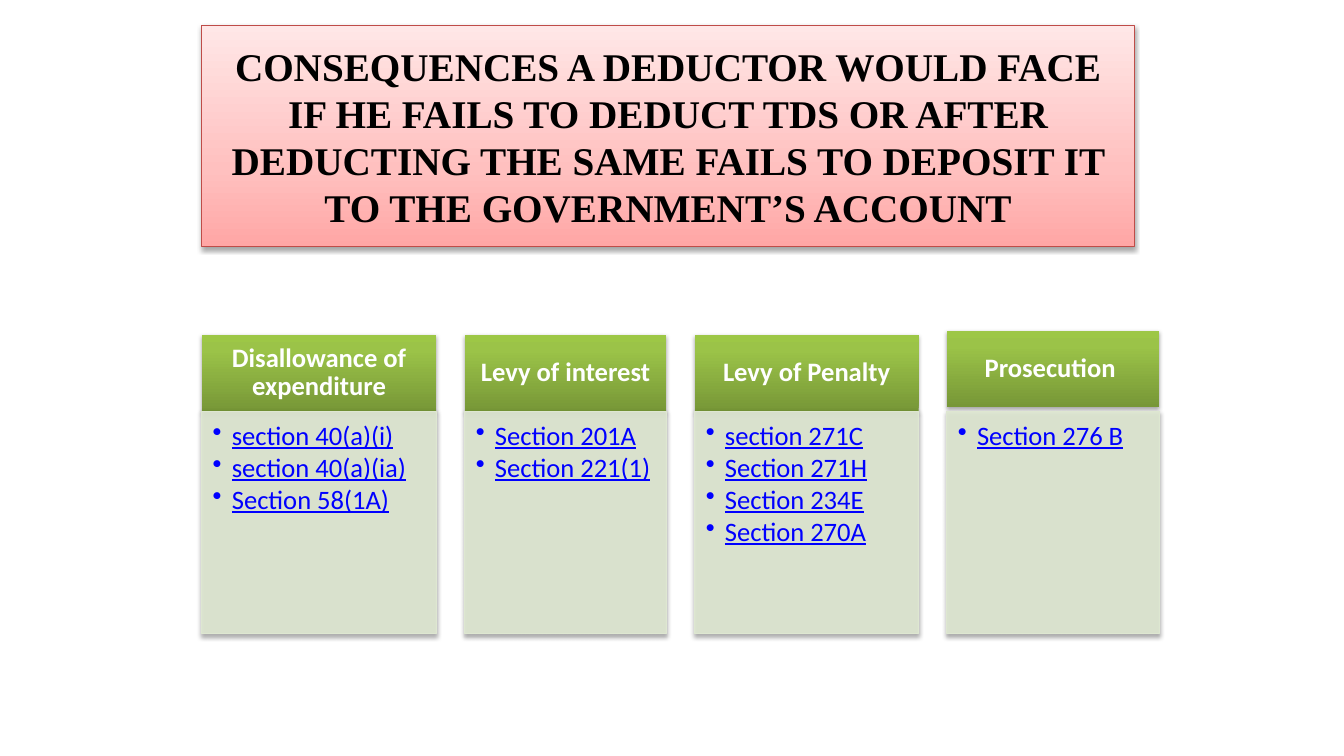
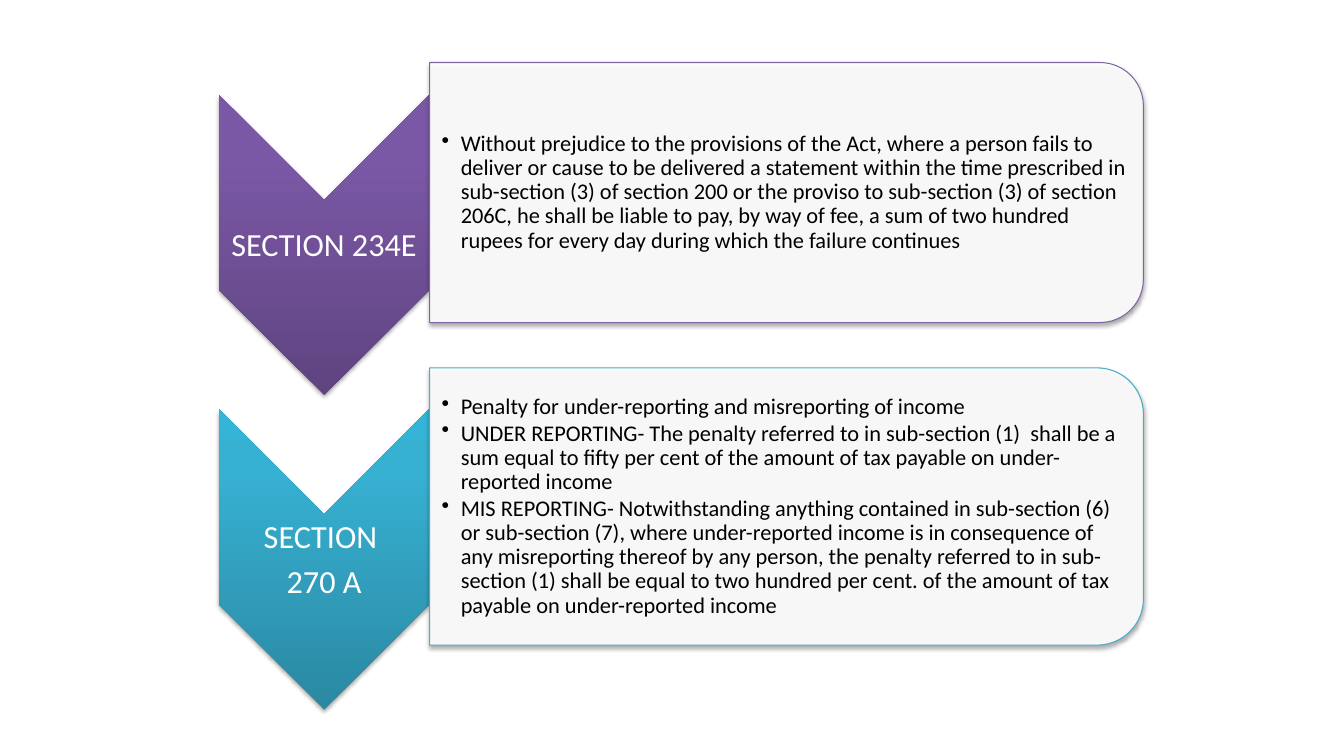
from pptx import Presentation
from pptx.dml.color import RGBColor
from pptx.enum.shapes import MSO_SHAPE
from pptx.enum.text import MSO_ANCHOR, MSO_AUTO_SIZE, PP_ALIGN
from pptx.oxml import parse_xml
from pptx.oxml.ns import nsdecls, qn
from pptx.util import Inches, Pt

# Shared colours
BLACK = RGBColor(0x00, 0x00, 0x00)
WHITE = RGBColor(0xFF, 0xFF, 0xFF)
LINK_BLUE = RGBColor(0x00, 0x00, 0xFF)
TITLE_LINE = RGBColor(0xBF, 0x4C, 0x48)
PANEL_GREEN = RGBColor(0xDE, 0xE7, 0xD1)
PURPLE = RGBColor(0x80, 0x64, 0xA2)
TEAL = RGBColor(0x4B, 0xAC, 0xC6)

# Gradients run from the bottom upwards: (percent, colour)
PINK_GRADIENT = [(0, RGBColor(0xFF, 0xA6, 0xA5)), (35, RGBColor(0xFF, 0xC0, 0xBF)),
                 (100, RGBColor(0xFF, 0xE7, 0xE7))]
GREEN_GRADIENT = [(0, RGBColor(0x77, 0x97, 0x37)), (80, RGBColor(0x9B, 0xC3, 0x48)),
                  (100, RGBColor(0x9D, 0xC7, 0x46))]
PURPLE_GRADIENT = [(0, RGBColor(0x5F, 0x44, 0x80)), (80, RGBColor(0x7B, 0x58, 0xA6)),
                   (100, RGBColor(0x7C, 0x57, 0xA8))]
TEAL_GRADIENT = [(0, RGBColor(0x2A, 0x88, 0xA2)), (80, RGBColor(0x37, 0xB1, 0xD2)),
                 (100, RGBColor(0x34, 0xB4, 0xD6))]


def style_shape(shape, gradient=None, color=None, line=None):
    """Give a shape a gradient or a 90% solid fill, an outline and a soft shadow."""
    properties = shape._element.spPr
    if gradient:
        shape.fill.gradient()
        shape.fill.gradient_angle = 90
        gradient_fill = properties.find(qn("a:gradFill"))
        gradient_fill.set("rotWithShape", "0")
        stops = gradient_fill.find(qn("a:gsLst"))
        stops.clear()
        for percent, stop_color in gradient:
            stops.append(parse_xml(
                f'<a:gs {nsdecls("a")} pos="{percent * 1000}"><a:srgbClr val="{stop_color}"/></a:gs>'))
    else:
        shape.fill.solid()
        shape.fill.fore_color.rgb = color
        properties.find(qn("a:solidFill"))[0].append(
            parse_xml(f'<a:alpha {nsdecls("a")} val="90000"/>'))
    if line is None:
        shape.line.fill.background()
    else:
        shape.line.color.rgb = line
        shape.line.width = Pt(0.75)
    shape.shadow.inherit = False
    properties.find(qn("a:effectLst")).append(parse_xml(
        f'<a:outerShdw {nsdecls("a")} blurRad="{Pt(3.1)}" dist="{Pt(1.8)}" dir="5400000" rotWithShape="0">'
        '<a:srgbClr val="000000"><a:alpha val="35000"/></a:srgbClr></a:outerShdw>'))


def write_text(shape, lines, size, color, font="Calibri", bold=False, underline=False, bullets=False,
               anchor=MSO_ANCHOR.MIDDLE, insets=(0.1, 0.05, 0.1, 0.05), line_spacing=0.9):
    """Write one paragraph per line, centred or bulleted."""
    frame = shape.text_frame
    frame.word_wrap = True
    frame.auto_size = MSO_AUTO_SIZE.NONE
    frame.vertical_anchor = anchor
    frame.margin_left, frame.margin_top, frame.margin_right, frame.margin_bottom = map(Inches, insets)
    for index, line in enumerate(lines):
        paragraph = frame.add_paragraph() if index else frame.paragraphs[0]
        paragraph.alignment = PP_ALIGN.LEFT if bullets else PP_ALIGN.CENTER
        paragraph.line_spacing = line_spacing
        paragraph.space_after = Pt(round(size * (0.12 if bullets else 0.33), 1))
        if bullets:
            paragraph_format = paragraph._p.get_or_add_pPr()
            paragraph_format.set("marL", str(Inches(0.19)))
            paragraph_format.set("indent", str(-Inches(0.19)))
            paragraph_format.append(parse_xml(f'<a:buChar {nsdecls("a")} char="•"/>'))
        run = paragraph.add_run()
        run.text = line
        run.font.name = font
        run.font.size = Pt(size)
        run.font.bold = bold
        run.font.underline = underline
        run.font.color.rgb = color


presentation = Presentation()
presentation.slide_width = Inches(13.33)
presentation.slide_height = Inches(7.5)

# Slide 1: title
slide = presentation.slides.add_slide(presentation.slide_layouts[5])
title = slide.shapes.title
title.left, title.top, title.width, title.height = map(Inches, (2, 0.25, 9.25, 2.2))
title._element.spPr.append(parse_xml(
    f'<a:prstGeom {nsdecls("a")} prst="roundRect"><a:avLst/></a:prstGeom>'))
style_shape(title, gradient=PINK_GRADIENT, line=TITLE_LINE)
write_text(title, ["CONSEQUENCES A DEDUCTOR WOULD FACE IF HE FAILS TO DEDUCT TDS OR AFTER "
                   "DEDUCTING THE SAME FAILS TO DEPOSIT IT TO THE GOVERNMENT’S ACCOUNT"],
           28, BLACK, font="Times New Roman", bold=True, line_spacing=1)

# Slide 1: columns of heading, heading top, width and sections
columns = [
    ("Disallowance of expenditure", 3.32, 2.33,
     ["section 40(a)(i)", "section 40(a)(ia)", "Section 58(1A)"]),
    ("Levy of interest", 3.32, 2, ["Section 201A", "Section 221(1)"]),
    ("Levy of Penalty", 3.32, 2.22,
     ["section 271C", "Section 271H", "Section 234E", "Section 270A"]),
    ("Prosecution ", 3.28, 2.11, ["Section 276 B"]),
]
COLUMN_GAP = 0.28
left = 2
for heading, heading_top, width, sections in columns:
    header = slide.shapes.add_shape(MSO_SHAPE.RECTANGLE, Inches(left), Inches(heading_top),
                                    Inches(width), Inches(0.76))
    style_shape(header, gradient=GREEN_GRADIENT)
    write_text(header, [heading], 19, WHITE, bold=True, insets=(0.15, 0.08, 0.15, 0.08))
    panel = slide.shapes.add_shape(MSO_SHAPE.RECTANGLE, Inches(left), Inches(4.08),
                                   Inches(width), Inches(2.21))
    style_shape(panel, color=PANEL_GREEN, line=PANEL_GREEN)
    write_text(panel, sections, 19, LINK_BLUE, underline=True, bullets=True,
               anchor=MSO_ANCHOR.TOP, insets=(0.11, 0.11, 0.15, 0.17))
    left += width + COLUMN_GAP

# Slide 2: rows of label, chevron top, panel top and height, colours and provisions
slide = presentation.slides.add_slide(presentation.slide_layouts[6])
rows = [
    (["SECTION 234E"], 0.94, 0.62, 2.58, PURPLE_GRADIENT, PURPLE,
     ["Without prejudice to the provisions of the Act, where a person fails to deliver or cause to be "
      "delivered a statement within the time prescribed in sub-section (3) of section 200 or the proviso "
      "to sub-section (3) of section 206C, he shall be liable to pay, by way of fee, a sum of two hundred "
      "rupees for every day during which the failure continues"]),
    (["SECTION ", "270 A"], 4.06, 3.65, 2.75, TEAL_GRADIENT, TEAL,
     ["Penalty for under-reporting and misreporting of income",
      "UNDER REPORTING- The penalty referred to in sub-section (1)  shall be a sum equal to fifty per cent "
      "of the amount of tax payable on under-reported income",
      "MIS REPORTING- Notwithstanding anything contained in sub-section (6) or sub-section (7), where "
      "under-reported income is in consequence of any misreporting thereof by any person, the penalty "
      "referred to in sub-section (1) shall be equal to two hundred per cent. of the amount of tax payable "
      "on under-reported income"]),
]
CHEVRON_LEFT, CHEVRON_WIDTH, CHEVRON_HEIGHT = 2.17, 2.09, 2.98
PANEL_LEFT, PANEL_WIDTH = 4.26, 7.08
for label, chevron_top, panel_top, panel_height, gradient, line_color, provisions in rows:
    # Both shapes are turned a quarter, so width and height swap around the centre
    turned_shapes = []
    for kind, shape_left, shape_top, width, height in [
            (MSO_SHAPE.CHEVRON, CHEVRON_LEFT, chevron_top, CHEVRON_WIDTH, CHEVRON_HEIGHT),
            (MSO_SHAPE.ROUND_2_SAME_RECTANGLE, PANEL_LEFT, panel_top, PANEL_WIDTH, panel_height)]:
        shift = (width - height) / 2
        shape = slide.shapes.add_shape(kind, Inches(shape_left + shift), Inches(shape_top - shift),
                                       Inches(height), Inches(width))
        shape.rotation = 90
        turned_shapes.append(shape)
    chevron, panel = turned_shapes
    style_shape(chevron, gradient=gradient)
    style_shape(panel, color=WHITE, line=line_color)

    label_box = slide.shapes.add_textbox(Inches(CHEVRON_LEFT), Inches(chevron_top + 1.05),
                                         Inches(CHEVRON_WIDTH), Inches(0.9))
    write_text(label_box, label, 23, WHITE, insets=(0.02, 0.02, 0.02, 0.02))
    provision_box = slide.shapes.add_textbox(Inches(PANEL_LEFT), Inches(panel_top + 0.13),
                                             Inches(6.95), Inches(panel_height - 0.26))
    write_text(provision_box, provisions, 16, BLACK, bullets=True, insets=(0.12, 0.01, 0.01, 0.01))

presentation.save("out.pptx")
